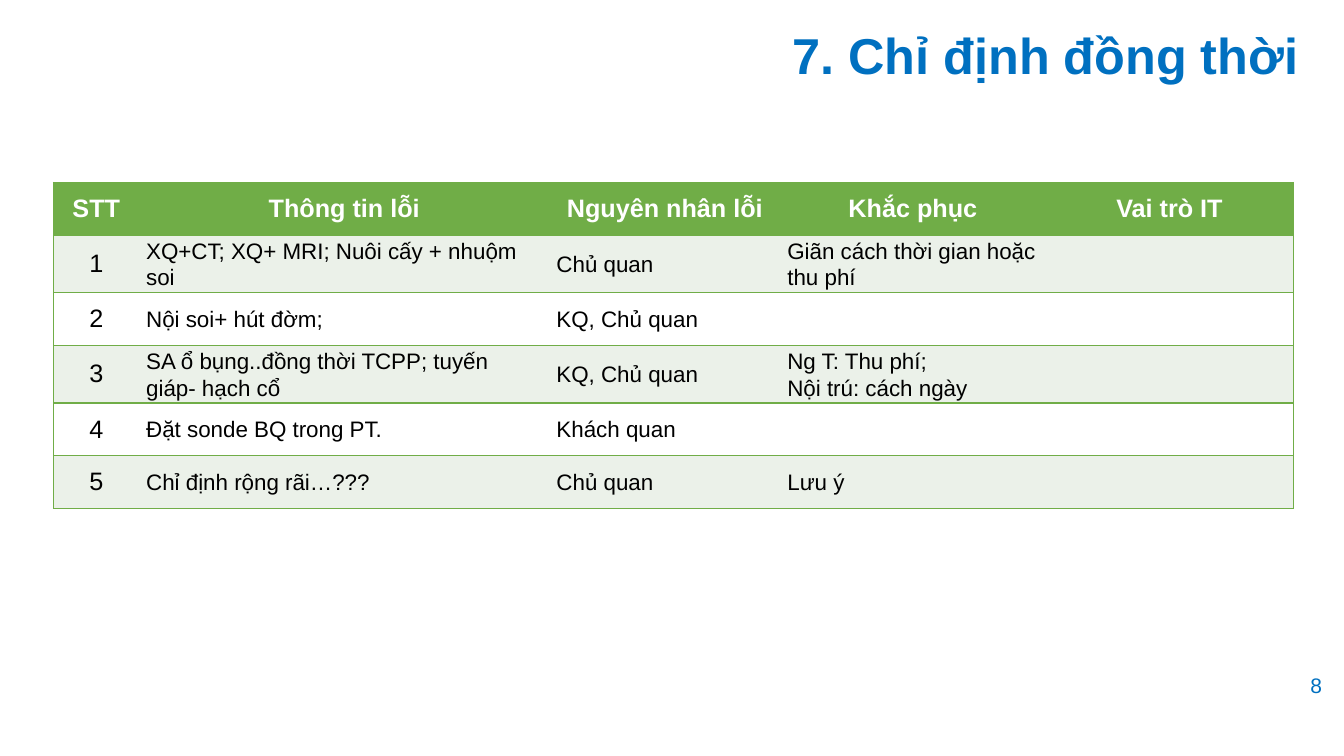
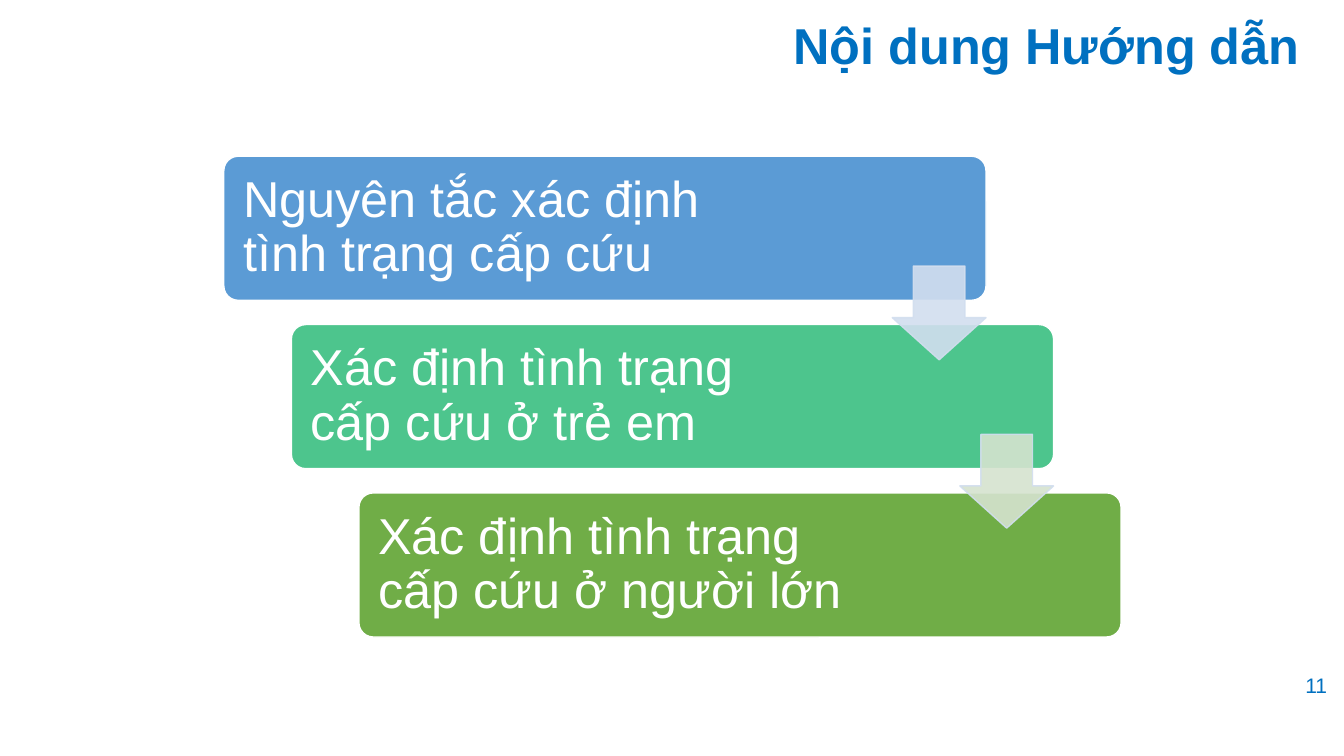
from dataclasses import dataclass
from typing import Any

from lxml.etree import SubElement
from pptx import Presentation
from pptx.dml.color import RGBColor
from pptx.enum.shapes import MSO_SHAPE as Preset
from pptx.enum.text import MSO_ANCHOR as Anchor, PP_ALIGN as Align
from pptx.oxml.ns import qn
from pptx.util import Inches, Pt

BLUE = RGBColor(0x00, 0x70, 0xC0)
GREEN = RGBColor(0x70, 0xAD, 0x47)
MINT = RGBColor(0x4D, 0xC5, 0x8D)
SKY = RGBColor(0x5B, 0x9B, 0xD5)
PALE_BLUE = RGBColor(0xD2, 0xDE, 0xEF)
PALE_GREEN = RGBColor(0xD5, 0xE3, 0xCF)
BAND = RGBColor(0xEB, 0xF1, 0xE9)
WHITE = RGBColor(0xFF, 0xFF, 0xFF)
BLACK = RGBColor(0x00, 0x00, 0x00)

BLANK_LAYOUT = 6


@dataclass(frozen=True)
class TextStyle:
    size: int
    color: RGBColor
    bold: bool = False
    align: Align = Align.LEFT
    anchor: Anchor = Anchor.MIDDLE
    spacing: float = 1.0


@dataclass(frozen=True)
class Box:
    left: float
    top: float
    width: float
    height: float

    def lengths(self) -> list[int]:
        return [Inches(v) for v in (self.left, self.top, self.width, self.height)]


@dataclass(frozen=True)
class Step:
    text: str
    fill: RGBColor
    arrow_fill: RGBColor | None = None


TITLE = TextStyle(36, BLUE, bold=True, align=Align.RIGHT, anchor=Anchor.TOP)
PAGE_NUMBER = TextStyle(15, BLUE, align=Align.CENTER)
HEADER = TextStyle(18, WHITE, bold=True, align=Align.CENTER)
ROW_NUMBER = TextStyle(18, BLACK, align=Align.CENTER)
BODY = TextStyle(16, BLACK, spacing=1.07)
STEP = TextStyle(36, WHITE, spacing=0.9)

PAGE_NUMBER_BOX = Box(12.78, 6.6, 0.55, 0.39)
TABLE_BOX = Box(0.53, 1.81, 12.3, 3.14)
COLUMN_WIDTHS = [0.85, 4.07, 2.29, 2.63, 2.46]
ERROR_ROWS = [
    ["STT", "Thông tin lỗi", "Nguyên nhân lỗi", "Khắc phục", "Vai trò IT"],
    ["1", "XQ+CT; XQ+ MRI; Nuôi cấy + nhuộm soi", "Chủ quan",
     "Giãn cách thời gian hoặc thu phí", ""],
    ["2", "Nội soi+ hút đờm;", "KQ, Chủ quan", "", ""],
    ["3", "SA ổ bụng..đồng thời TCPP; tuyến giáp- hạch cổ", "KQ, Chủ quan",
     "Ng T: Thu phí;\nNội trú: cách ngày", ""],
    ["4", "Đặt sonde BQ trong PT.", "Khách quan", "", ""],
    ["5", "Chỉ định rộng rãi…???", "Chủ quan", "Lưu ý", ""],
]

STEPS = [
    Step("Nguyên tắc xác định\vtình trạng cấp cứu", SKY, PALE_BLUE),
    Step("Xác định tình trạng\vcấp cứu ở trẻ em", MINT, PALE_GREEN),
    Step("Xác định tình trạng\vcấp cứu ở người lớn", GREEN),
]
FIRST_STEP = Box(2.22, 1.55, 7.56, 1.43)
STEP_SHIFT = 0.67
STEP_PITCH = 1.67
STEP_INSET = 0.15
ARROW_SIZE = 0.93
ARROW_DROP = 1.09


def apply(target: Any, values: dict[str, Any]) -> None:
    for name, value in values.items():
        setattr(target, name, value)


def write_text(frame: Any, text: str, style: TextStyle) -> None:
    frame.text = text
    for paragraph in frame.paragraphs:
        apply(paragraph, {"alignment": style.align, "line_spacing": style.spacing})
        for run in paragraph.runs:
            apply(run.font, {"name": "Arial", "size": Pt(style.size), "bold": style.bold})
            run.font.color.rgb = style.color


def add_text(slide: Any, box: Box, text: str, style: TextStyle) -> None:
    frame = slide.shapes.add_textbox(*box.lengths()).text_frame
    apply(frame, {"word_wrap": True, "vertical_anchor": style.anchor})
    write_text(frame, text, style)


def add_slide(presentation: Any, title: str, title_box: Box, number: int) -> Any:
    slide = presentation.slides.add_slide(presentation.slide_layouts[BLANK_LAYOUT])
    add_text(slide, PAGE_NUMBER_BOX, str(number), PAGE_NUMBER)
    add_text(slide, title_box, title, TITLE)
    return slide


def set_borders(cell: Any, sides: dict[str, bool]) -> None:
    properties = cell._tc.get_or_add_tcPr()
    for side, visible in sides.items():
        line = SubElement(properties, qn(f"a:ln{side}"), w=str(Pt(1)))
        if visible:
            fill = SubElement(line, qn("a:solidFill"))
            SubElement(fill, qn("a:srgbClr"), val=str(GREEN))
        else:
            SubElement(line, qn("a:noFill"))


def add_error_table(slide: Any) -> None:
    last = len(COLUMN_WIDTHS) - 1
    table = slide.shapes.add_table(
        len(ERROR_ROWS), len(COLUMN_WIDTHS), *TABLE_BOX.lengths()).table
    apply(table, {"first_row": False, "horz_banding": False})
    for column, width in zip(table.columns, COLUMN_WIDTHS):
        column.width = Inches(width)
    for row, texts in enumerate(ERROR_ROWS):
        row_fill = GREEN if row == 0 else BAND if row % 2 else WHITE
        for column, text in enumerate(texts):
            cell = table.cell(row, column)
            set_borders(cell, {"L": column == 0, "R": column == last, "T": True, "B": True})
            cell.fill.solid()
            cell.fill.fore_color.rgb = row_fill
            cell.vertical_anchor = Anchor.MIDDLE
            style = HEADER if row == 0 else ROW_NUMBER if column == 0 else BODY
            if style is BODY and text:
                apply(cell, {"margin_left": Inches(0.07), "margin_right": Inches(0.07),
                             "margin_top": 0, "margin_bottom": 0})
            write_text(cell.text_frame, text, style)


def add_filled_shape(slide: Any, preset: Preset, box: Box, fill: RGBColor,
                     line: RGBColor, adjustments: list[float]) -> Any:
    shape = slide.shapes.add_shape(preset, *box.lengths())
    shape.shadow.inherit = False
    shape.fill.solid()
    shape.fill.fore_color.rgb = fill
    shape.line.color.rgb = line
    shape.line.width = Pt(1)
    for index, value in enumerate(adjustments):
        shape.adjustments[index] = value
    return shape


def add_step(slide: Any, box: Box, step: Step) -> None:
    shape = add_filled_shape(slide, Preset.ROUNDED_RECTANGLE, box, step.fill, WHITE, [0.1])
    frame = shape.text_frame
    margins = {f"margin_{side}": Inches(STEP_INSET)
               for side in ("left", "top", "right", "bottom")}
    apply(frame, {"word_wrap": True, "vertical_anchor": STEP.anchor, **margins})
    write_text(frame, step.text, STEP)


def add_arrow(slide: Any, step_box: Box, fill: RGBColor) -> None:
    box = Box(step_box.left + step_box.width - ARROW_SIZE, step_box.top + ARROW_DROP,
              ARROW_SIZE, ARROW_SIZE)
    arrow = add_filled_shape(slide, Preset.DOWN_ARROW, box, fill, PALE_BLUE, [0.55, 0.45])
    for color in arrow.element.spPr.iter(qn("a:srgbClr")):
        SubElement(color, qn("a:alpha"), val="90000")


def add_staircase(slide: Any) -> None:
    boxes = [Box(FIRST_STEP.left + index * STEP_SHIFT, FIRST_STEP.top + index * STEP_PITCH,
                 FIRST_STEP.width, FIRST_STEP.height) for index in range(len(STEPS))]
    for box, step in zip(boxes, STEPS):
        add_step(slide, box, step)
    for box, step in zip(boxes, STEPS):
        if step.arrow_fill is not None:
            add_arrow(slide, box, step.arrow_fill)


def main() -> None:
    presentation = Presentation()
    apply(presentation, {"slide_width": Inches(13.33), "slide_height": Inches(7.5)})
    add_error_table(add_slide(
        presentation, "7. Chỉ định đồng thời", Box(2.66, 0.19, 10.32, 0.88), 8))
    add_staircase(add_slide(
        presentation, "Nội dung Hướng dẫn", Box(2.37, 0.09, 10.62, 0.85), 11))
    presentation.save("out.pptx")


if __name__ == "__main__":
    main()
